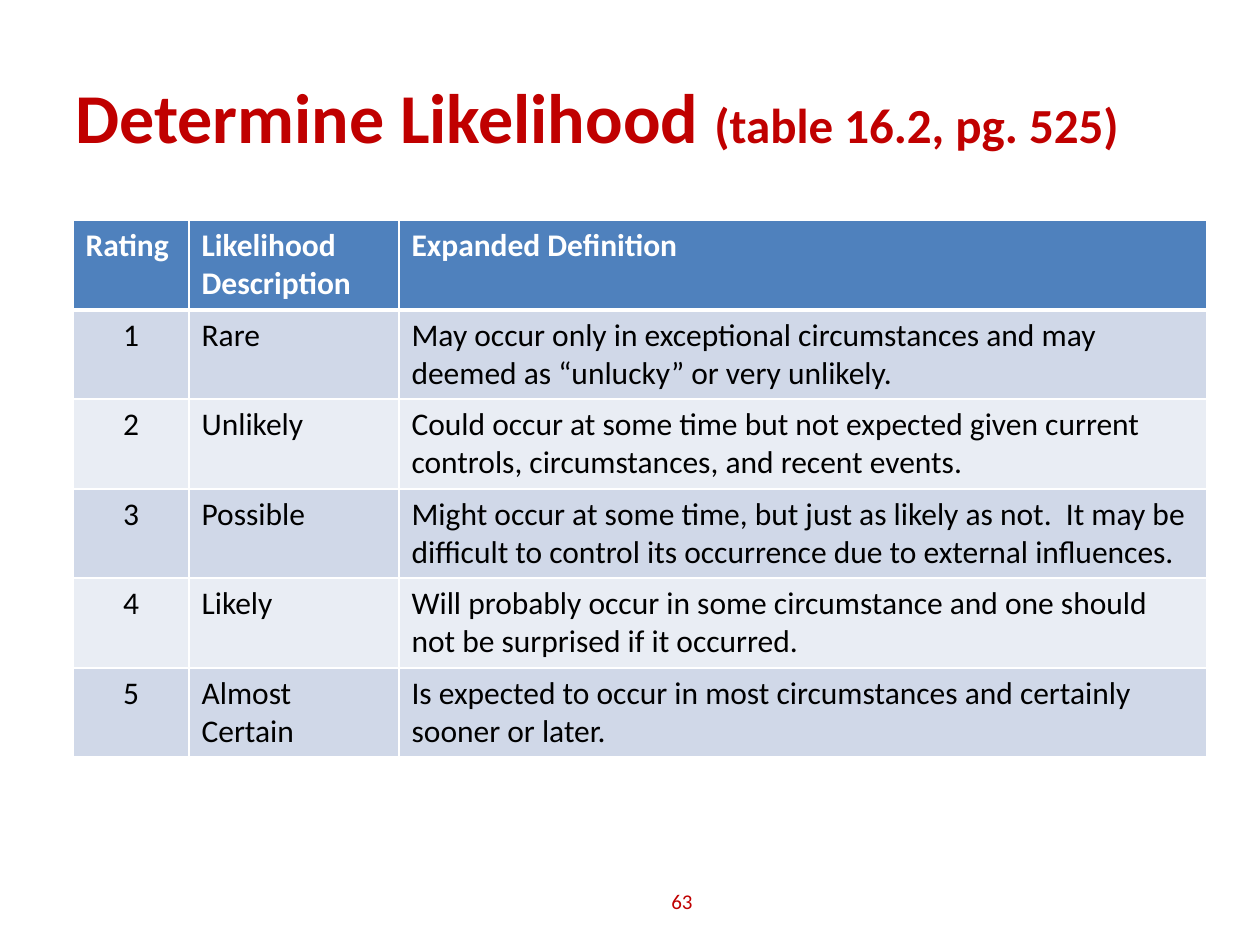
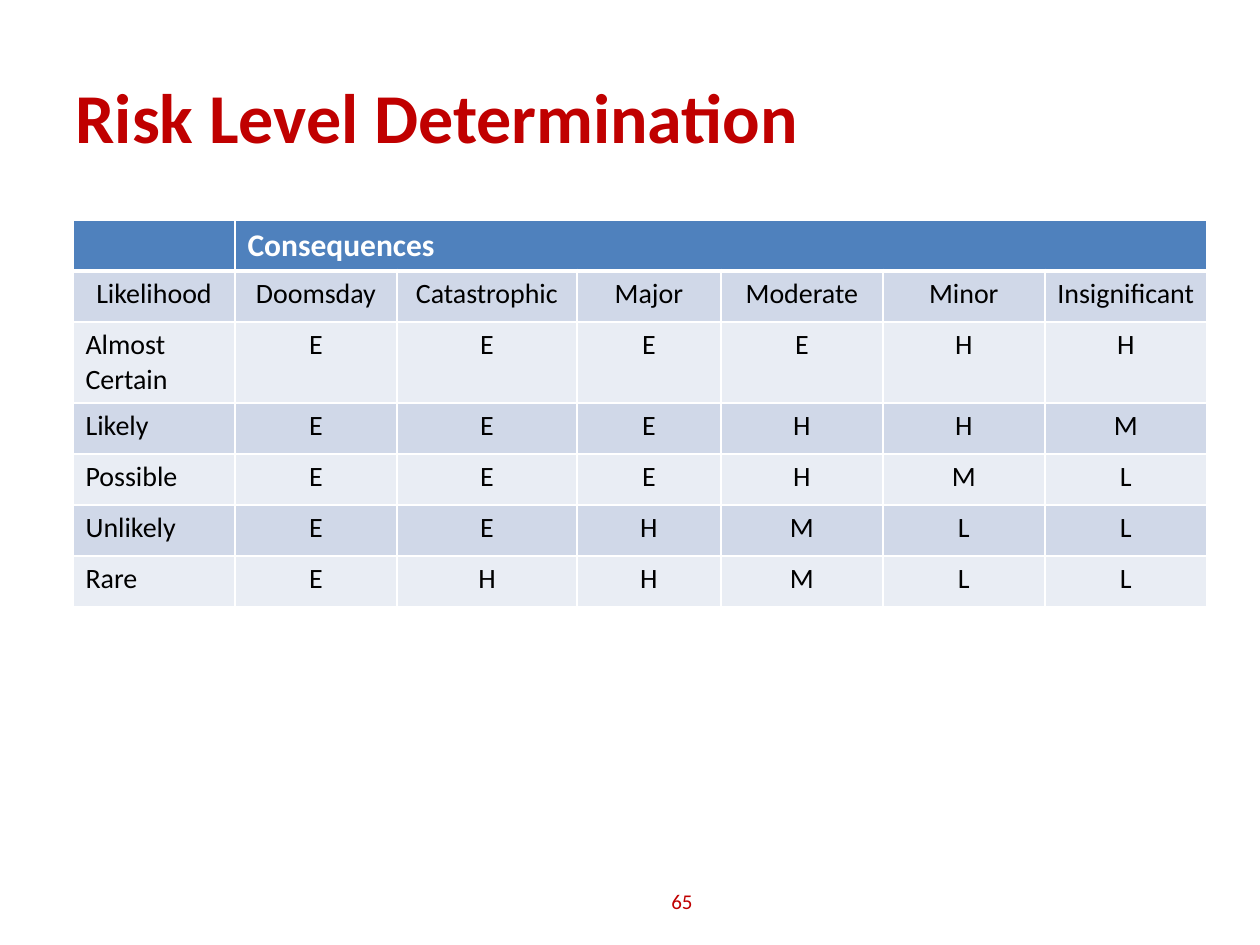
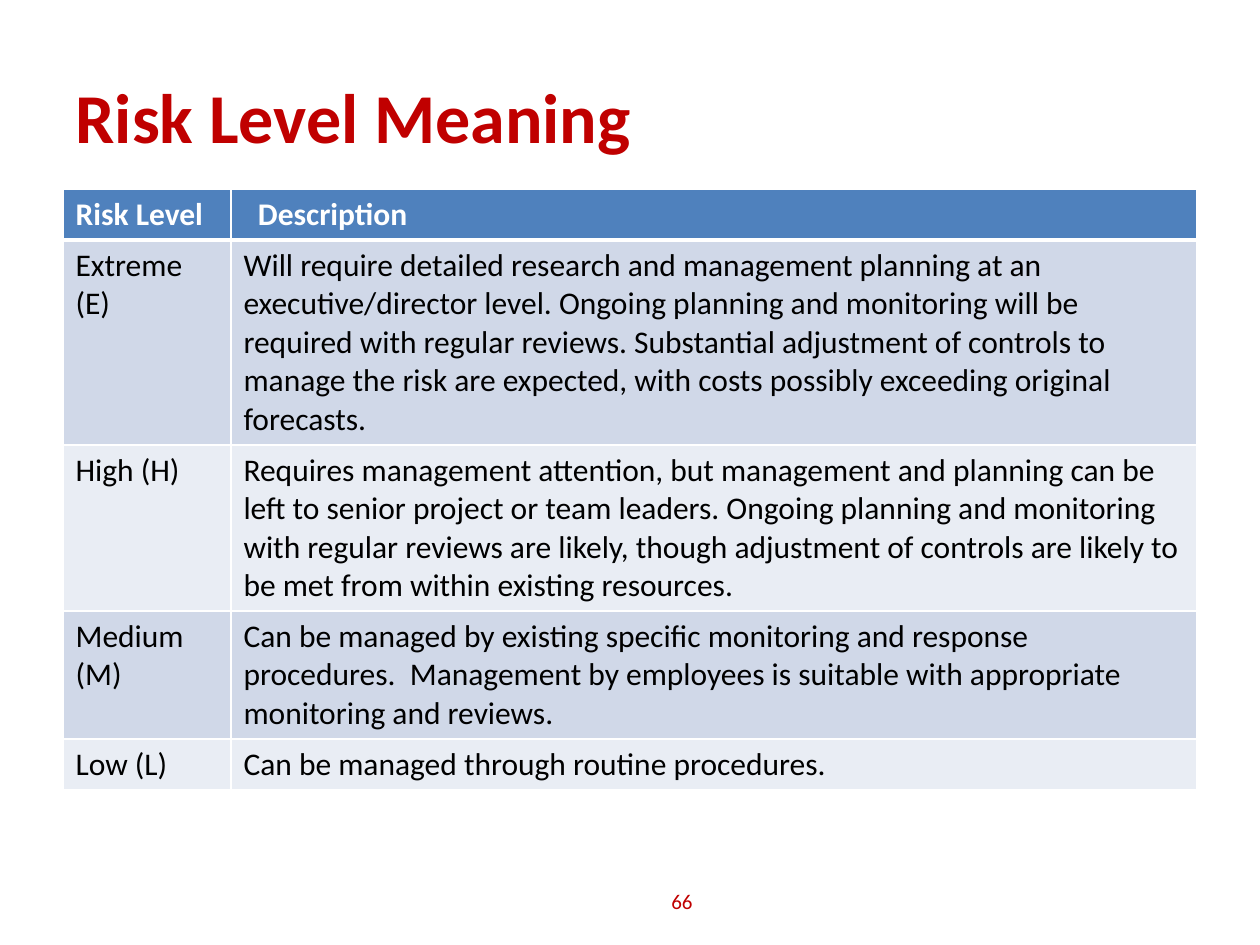
from lxml import etree
from pptx import Presentation
from pptx import util as u
from pptx.dml import color
from pptx.enum import text
from pptx.oxml import ns

FONT = "Calibri"
RED, BLUE, WHITE, BLACK = "C00000", "4F81BD", "FFFFFF", "000000"
BANDS = ("D0D8E8", "E9EDF4")
TITLE_BOX = (63, 21, 1134, 189)
NUMBER_BOX = (535, 876, 294, 50)
LINE_ROW = 51  # height of a row with one line of text

LIKELIHOODS = [
    ("Rating", "Likelihood Description", "Expanded Definition"),
    ("1", "Rare", "May occur only in exceptional circumstances and may deemed as “unlucky” or very unlikely."),
    ("2", "Unlikely", "Could occur at some time but not expected given current controls, "
     "circumstances, and recent events."),
    ("3", "Possible", "Might occur at some time, but just as likely as not.  It may be difficult "
     "to control its occurrence due to external influences."),
    ("4", "Likely", "Will probably occur in some circumstance and one should not be surprised if it occurred."),
    ("5", "Almost Certain", "Is expected to occur in most circumstances and certainly sooner or later."),
]
RISK_LEVELS = [
    ("", "Consequences", "", "", "", "", ""),
    ("Likelihood", "Doomsday", "Catastrophic", "Major", "Moderate", "Minor", "Insignificant"),
    ("Almost Certain", *"EEEEHH"),
    ("Likely", *"EEEHHM"),
    ("Possible", *"EEEHML"),
    ("Unlikely", *"EEHMLL"),
    ("Rare", *"EHHMLL"),
]
MEANINGS = [
    ("Risk Level", "Description"),
    ("Extreme (E)", "Will require detailed research and management planning at an executive/director "
     "level. Ongoing planning and monitoring will be required with regular reviews. Substantial "
     "adjustment of controls to manage the risk are expected, with costs possibly exceeding "
     "original forecasts."),
    ("High (H)", "Requires management attention, but management and planning can be left to senior "
     "project or team leaders. Ongoing planning and monitoring with regular reviews are likely, "
     "though adjustment of controls are likely to be met from within existing resources."),
    ("Medium (M)", "Can be managed by existing specific monitoring and response procedures.  "
     "Management by employees is suitable with appropriate monitoring and reviews."),
    ("Low (L)", "Can be managed through routine procedures."),
]


def px(length):
    return u.Emu(round(length * 914400 / 126))


def rgb(value):
    return color.RGBColor.from_string(value)


def add_span(para, words, size, ink, bold=False):
    span = para.add_run()
    span.text = words
    span.font.name = FONT
    span.font.size = u.Pt(size)
    span.font.bold = bold
    span.font.color.rgb = rgb(ink)


def set_borders(cell, top, bottom):
    """Draw white lines on all four sides; they must precede the fill."""
    properties = cell._tc.get_or_add_tcPr()
    for index, (side, width) in enumerate((("L", 1), ("R", 1), ("T", top), ("B", bottom))):
        line = etree.Element(ns.qn(f"a:ln{side}"), w=str(u.Pt(width)))
        fill = etree.SubElement(line, ns.qn("a:solidFill"))
        etree.SubElement(fill, ns.qn("a:srgbClr"), val=WHITE)
        properties.insert(index, line)


def add_page(deck, title_spans, number):
    page = deck.slides.add_slide(deck.slide_layouts[5])

    # Title
    title = page.shapes.title
    title.left, title.top, title.width, title.height = map(px, TITLE_BOX)
    title.text_frame.vertical_anchor = text.MSO_ANCHOR.MIDDLE
    title.text_frame.auto_size = text.MSO_AUTO_SIZE.NONE
    para = title.text_frame.paragraphs[0]
    para.alignment = text.PP_ALIGN.LEFT
    for words, size in title_spans:
        add_span(para, words, size, RED, bold=True)

    # Page number
    frame = page.shapes.add_textbox(*map(px, NUMBER_BOX)).text_frame
    frame.word_wrap = True
    frame.vertical_anchor = text.MSO_ANCHOR.MIDDLE
    frame.paragraphs[0].alignment = text.PP_ALIGN.CENTER
    add_span(frame.paragraphs[0], number, 12, RED)
    return page


def add_grid(page, left, top, widths, heights, rows, is_centred, body_size=18):
    box = (left, top, sum(widths), sum(heights))
    table = page.shapes.add_table(len(rows), len(widths), *map(px, box)).table
    table.horz_banding = False
    for column, width in zip(table.columns, widths):
        column.width = px(width)
    for table_row, height in zip(table.rows, heights):
        table_row.height = px(height)
    for r, row in enumerate(rows):
        is_header = r == 0
        for c, words in enumerate(row):
            cell = table.cell(r, c)
            cell.fill.solid()
            cell.fill.fore_color.rgb = rgb(BLUE if is_header else BANDS[(r - 1) % 2])
            set_borders(cell, top=3 if r == 1 else 1, bottom=3 if is_header else 1)
            para = cell.text_frame.paragraphs[0]
            if not is_header and is_centred(r, c):
                para.alignment = text.PP_ALIGN.CENTER
            if words:
                add_span(para, words, 18 if is_header else body_size,
                         WHITE if is_header else BLACK, bold=is_header)
    return table


def likelihood_page(deck):
    page = add_page(deck, [("Determine Likelihood ", 40), ("(table 16.2, pg. 525)", 28)], "63")
    add_grid(page, 73, 220, (116, 210, 808), (90, 89) * 3, LIKELIHOODS, lambda r, c: c == 0)


def risk_level_page(deck):
    page = add_page(deck, [("Risk Level Determination", 40)], "65")
    heights = [LINE_ROW] * len(RISK_LEVELS)
    heights[2] = 81
    table = add_grid(page, 73, 220, (162, 162, 180, 144, 162, 162, 162), heights, RISK_LEVELS,
                     lambda r, c: r == 1 or c > 0, body_size=16)
    table.cell(0, 1).merge(table.cell(0, 6))


def meaning_page(deck):
    page = add_page(deck, [("Risk Level Meaning", 40)], "66")
    table = add_grid(page, 63, 189, (168, 966), (LINE_ROW, 205, 166, 128, LINE_ROW), MEANINGS,
                     lambda r, c: False)
    # The second heading is set in a little
    table.cell(0, 1).margin_left = px(27)


def main():
    deck = Presentation()
    deck.slide_width, deck.slide_height = px(1260), px(945)
    likelihood_page(deck)
    risk_level_page(deck)
    meaning_page(deck)
    deck.save("out.pptx")


if __name__ == "__main__":
    main()
